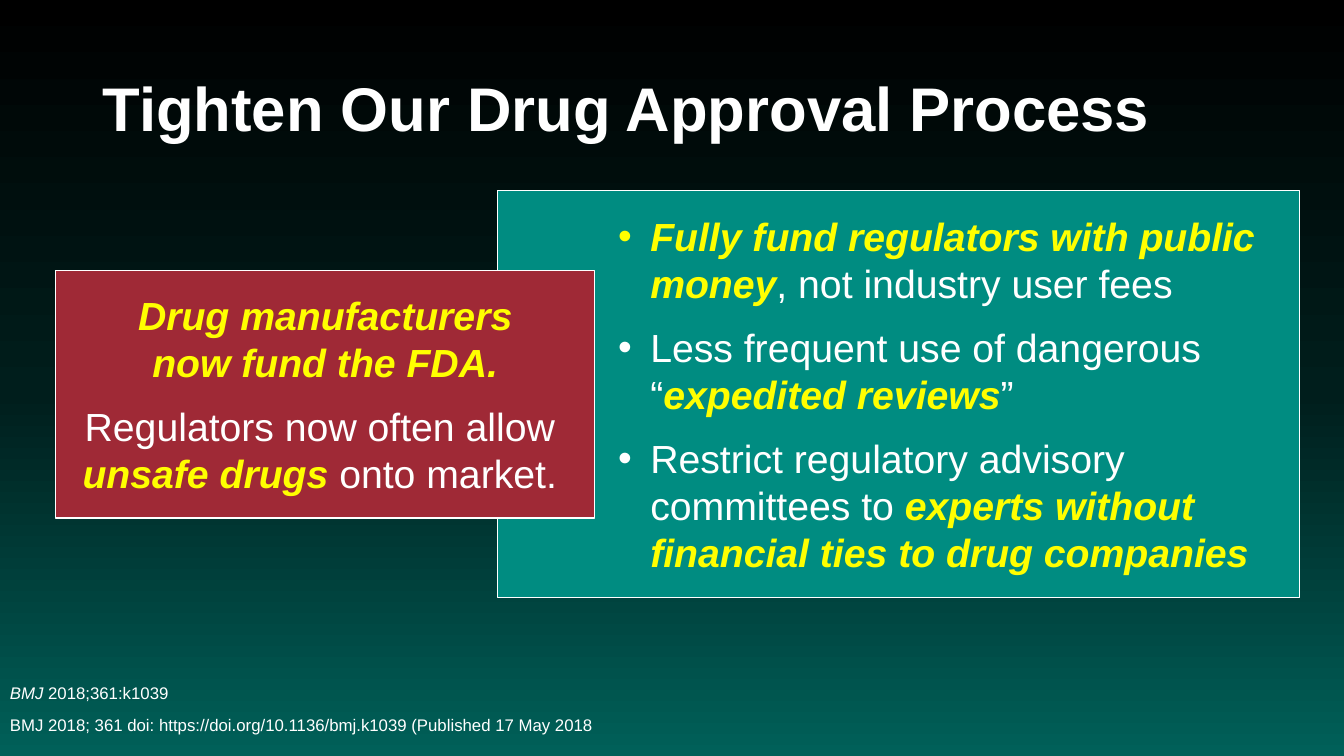
from dataclasses import dataclass

from lxml import etree
from pptx import Presentation
from pptx.dml.color import RGBColor as Rgb
from pptx.enum.shapes import MSO_SHAPE as Kind
from pptx.enum.text import MSO_ANCHOR as Anchor, MSO_AUTO_SIZE as Fit, PP_ALIGN as Align
from pptx.oxml.ns import qn
from pptx.util import Inches, Pt

HUES = {"white": "FFFFFF", "yellow": "FFFF00", "teal": "008C81", "red": "9F2936"}
FADE = [(0, "000000"), (52, "001E1C"), (100, "006059")]
EDGE = 0.2  # inner margin of the panels


@dataclass
class Look:
    hue: str = "white"
    bold: bool = False
    slant: bool = False


@dataclass
class Line:
    text: str
    after: float = 0


@dataclass
class Panel:
    box: tuple[float, float, float, float]
    fill: str
    inset: float
    lines: list[Line]
    align: Align = Align.LEFT
    dots: bool = False


PLAIN = Look()
KEY = Look("yellow", True, True)

PANELS = [
    Panel((4.93, 1.89, 7.96, 4.04), "teal", 1.2, [
        Line("*Fully fund regulators with public money*, not industry user fees", 12),
        Line("Less frequent use of dangerous “*expedited reviews*”", 12),
        Line("Restrict regulatory advisory committees to "
             "*experts without financial ties to drug companies*", 12),
    ], dots=True),
    Panel((0.55, 2.68, 5.35, 2.46), "red", EDGE, [
        Line("*Drug manufacturers*"),
        Line("*now fund the FDA.*", 12),
        Line("Regulators now often allow "),
        Line("*unsafe drugs *onto market. "),
    ], align=Align.CENTER),
]


def color(name: str) -> Rgb:
    return Rgb.from_string(HUES[name])


def paint(slide) -> None:
    """Fade the background from top to bottom."""
    fill = slide.background.fill
    fill.gradient()
    fill.gradient_angle = 270
    stops = fill._fill._gradFill.find(qn("a:gsLst"))
    for old in list(stops):
        stops.remove(old)
    for place, hue in FADE:
        stop = etree.SubElement(stops, qn("a:gs"), pos=str(place * 1000))
        etree.SubElement(stop, qn("a:srgbClr"), val=hue)


def dot(para) -> None:
    """Give a paragraph a bullet with a hanging indent."""
    props = para._p.get_or_add_pPr()
    props.set("marL", str(Inches(0.32)))
    props.set("indent", str(-Inches(0.32)))
    etree.SubElement(props, qn("a:buFont"), typeface="Arial")
    etree.SubElement(props, qn("a:buChar"), char="•")


def write(frame, lines: list[Line], *, size: float, base: Look = PLAIN,
          key: Look = KEY, align: Align = Align.LEFT, dots: bool = False,
          pitch: float | None = None, gap: float = 0) -> None:
    """Fill a frame; text between asterisks takes the key look."""
    frame.word_wrap = True
    frame.vertical_anchor = Anchor.MIDDLE
    for row, line in enumerate(lines):
        para = frame.add_paragraph() if row else frame.paragraphs[0]
        if dots:
            dot(para)
        para.alignment = align
        para.line_spacing = pitch
        para.space_before = Pt(gap if row else 0)
        para.space_after = Pt(line.after)
        for part, text in enumerate(line.text.split("*")):
            if not text:
                continue
            look = key if part % 2 else base
            run = para.add_run()
            run.text = text
            font = run.font
            font.name, font.size = "Arial", Pt(size)
            font.bold, font.italic = look.bold, look.slant
            font.color.rgb = color(look.hue)


def label(slide, box: tuple[float, float, float, float], lines: list[Line], **fmt) -> None:
    shape = slide.shapes.add_textbox(*map(Inches, box))
    write(shape.text_frame, lines, **fmt)


def draw(slide, panel: Panel) -> None:
    shape = slide.shapes.add_shape(Kind.RECTANGLE, *map(Inches, panel.box))
    shape.shadow.inherit = False
    shape.fill.solid()
    shape.fill.fore_color.rgb = color(panel.fill)
    shape.line.color.rgb = color("white")
    shape.line.width = Pt(0.75)
    frame = shape.text_frame
    frame.auto_size = Fit.SHAPE_TO_FIT_TEXT
    frame.margin_left = Inches(panel.inset)
    frame.margin_top = frame.margin_right = frame.margin_bottom = Inches(EDGE)
    write(frame, panel.lines, size=28, align=panel.align, dots=panel.dots)


def main() -> None:
    deck = Presentation()
    deck.slide_width, deck.slide_height = Inches(13.33), Inches(7.5)
    slide = deck.slides.add_slide(deck.slide_layouts[6])
    paint(slide)
    label(slide, (0.92, 0.4, 11.5, 1.45), [Line("Tighten Our Drug Approval Process")],
          size=44, base=Look(bold=True), pitch=0.8)
    label(slide, (0, 6.58, 9, 0.92), [
        Line("*BMJ* 2018;361:k1039"),
        Line("BMJ 2018; 361 doi: https://doi.org/10.1136/bmj.k1039 (Published 17 May 2018"),
    ], size=12, key=Look(slant=True), pitch=0.9, gap=10)
    for panel in PANELS:
        draw(slide, panel)
    deck.save("out.pptx")


if __name__ == "__main__":
    main()
